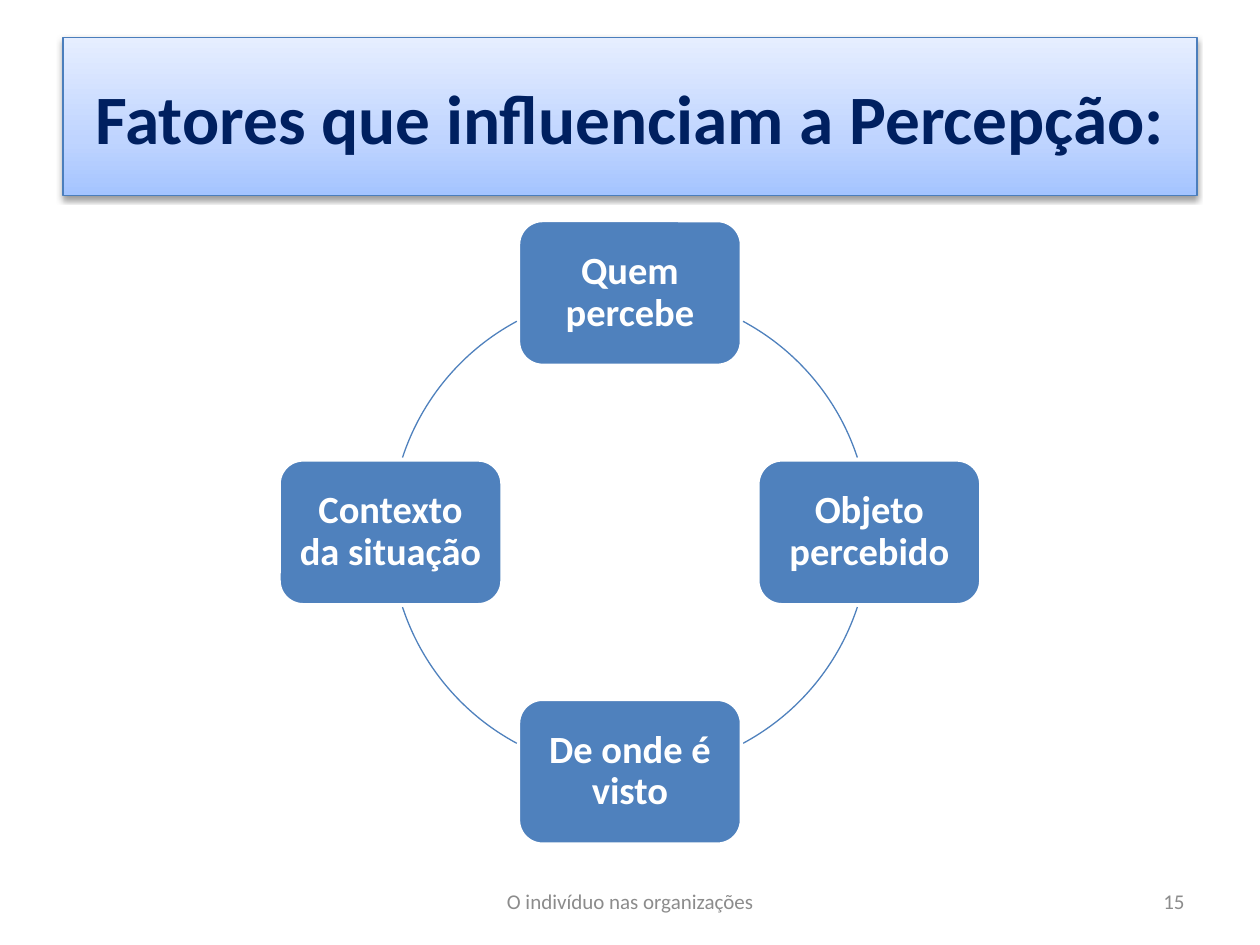
import math
from collections import namedtuple

import lxml.etree
import pptx
import pptx.dml.color
import pptx.enum.shapes
import pptx.enum.text
import pptx.oxml
import pptx.oxml.ns
import pptx.util

RGBColor = pptx.dml.color.RGBColor
MSO_SHAPE = pptx.enum.shapes.MSO_SHAPE
PP_ALIGN = pptx.enum.text.PP_ALIGN
Box = namedtuple("Box", "left top width height")

WHITE = RGBColor(0xFF, 0xFF, 0xFF)
NAVY = RGBColor(0x00, 0x20, 0x60)
BLUE = RGBColor(0x4F, 0x81, 0xBD)
BORDER_BLUE = RGBColor(0x4B, 0x7E, 0xBC)
GRAY = RGBColor(0x8C, 0x8C, 0x8C)
BLACK = RGBColor(0x00, 0x00, 0x00)
TITLE_STOPS = [
    (0, RGBColor(0xA4, 0xC4, 0xFF)),
    (35, RGBColor(0xBF, 0xD4, 0xFF)),
    (100, RGBColor(0xE6, 0xEE, 0xFF)),
]

FONT = "Calibri"
COLUMNS, ROWS = 40, 30
CELL = pptx.util.Inches(0.25)
NODE_WIDTH, NODE_HEIGHT = 7.08, 4.6
ARC_START, ARC_END = 18.2, 61.8
FACTORS = ["Quem percebe", "Objeto percebido", "De onde é visto", "Contexto da situação"]


def place(box):
    return [round(length * CELL) for length in box]


def add_shape(slide, kind, box, line_color, line_width):
    shape = slide.shapes.add_shape(kind, *place(box))
    shape.shadow.inherit = False
    shape.line.color.rgb = line_color
    shape.line.width = pptx.util.Pt(line_width)
    return shape


def write_text(shape, text, size, color, bold=False, alignment=PP_ALIGN.CENTER, spacing=1.0):
    frame = shape.text_frame
    frame.word_wrap = True
    frame.vertical_anchor = pptx.enum.text.MSO_ANCHOR.MIDDLE
    paragraph = frame.paragraphs[0]
    paragraph.alignment = alignment
    paragraph.line_spacing = spacing
    run = paragraph.add_run()
    run.text = text
    run.font.name = FONT
    run.font.size = pptx.util.Pt(size)
    run.font.bold = bold
    run.font.color.rgb = color


def add_title(slide, box, text):
    shape = add_shape(slide, MSO_SHAPE.RECTANGLE, box, BORDER_BLUE, 0.75)
    shape.fill.gradient()
    namespace = pptx.oxml.ns.nsdecls("a")
    properties = shape.element.spPr
    gradient = properties.find(pptx.oxml.ns.qn("a:gradFill"))
    stops = "".join(
        f'<a:gs pos="{position * 1000}"><a:srgbClr val="{color}"/></a:gs>'
        for position, color in TITLE_STOPS
    )
    properties.replace(gradient, pptx.oxml.parse_xml(
        f'<a:gradFill {namespace} rotWithShape="1"><a:gsLst>{stops}</a:gsLst>'
        '<a:lin ang="16200000" scaled="0"/></a:gradFill>'
    ))
    effects = properties.find(pptx.oxml.ns.qn("a:effectLst"))
    effects.append(pptx.oxml.parse_xml(
        f'<a:outerShdw {namespace} blurRad="{pptx.util.Pt(3.1)}" dist="{pptx.util.Pt(1.6)}" '
        f'dir="5400000" rotWithShape="0"><a:srgbClr val="{BLACK}">'
        '<a:alpha val="38000"/></a:srgbClr></a:outerShdw>'
    ))
    write_text(shape, text, 39.6, NAVY, bold=True)


def add_arc(slide, box, start, end):
    arc = add_shape(slide, MSO_SHAPE.ARC, box, BLUE, 0.75)
    arc.fill.background()
    for index, angle in enumerate((start, end)):
        arc.adjustments[index] = angle % 360 * 0.6


def add_node(slide, box, text):
    node = add_shape(slide, MSO_SHAPE.ROUNDED_RECTANGLE, box, WHITE, 2)
    node.fill.solid()
    node.fill.fore_color.rgb = BLUE
    frame = node.text_frame
    frame.margin_left = frame.margin_right = pptx.util.Inches(0.09)
    frame.margin_top = frame.margin_bottom = pptx.util.Inches(0.09)
    write_text(node, text, 22, WHITE, bold=True, spacing=0.9)


def add_cycle(slide, box, factors):
    radius_x, radius_y = box.width / 2, box.height / 2
    step = 360 / len(factors)
    for index, factor in enumerate(factors):
        angle = index * step - 90
        center_x = box.left + radius_x * (1 + math.cos(math.radians(angle)))
        center_y = box.top + radius_y * (1 + math.sin(math.radians(angle)))
        node_box = Box(center_x - NODE_WIDTH / 2, center_y - NODE_HEIGHT / 2,
                       NODE_WIDTH, NODE_HEIGHT)
        add_node(slide, node_box, factor)
        side = (ARC_START, ARC_END) if index % 2 else (step - ARC_END, step - ARC_START)
        add_arc(slide, box, angle + side[0], angle + side[1])


def add_footer_text(slide, box, text, alignment):
    text_box = slide.shapes.add_textbox(*place(box))
    write_text(text_box, text, 12, GRAY, alignment=alignment)


def main():
    presentation = pptx.Presentation()
    presentation.slide_width = COLUMNS * CELL
    presentation.slide_height = ROWS * CELL
    slide = presentation.slides.add_slide(presentation.slide_layouts[6])
    add_title(slide, Box(2, 1.2, 36, 5), "Fatores que influenciam a Percepção:")
    add_cycle(slide, Box(12.4, 9.3, 15.2, 15.2), FACTORS)
    add_footer_text(slide, Box(13.67, 27.8, 12.67, 1.6),
                    "O indivíduo nas organizações", PP_ALIGN.CENTER)
    add_footer_text(slide, Box(28.67, 27.8, 9.33, 1.6), "15", PP_ALIGN.RIGHT)
    presentation.save("out.pptx")


if __name__ == "__main__":
    main()
